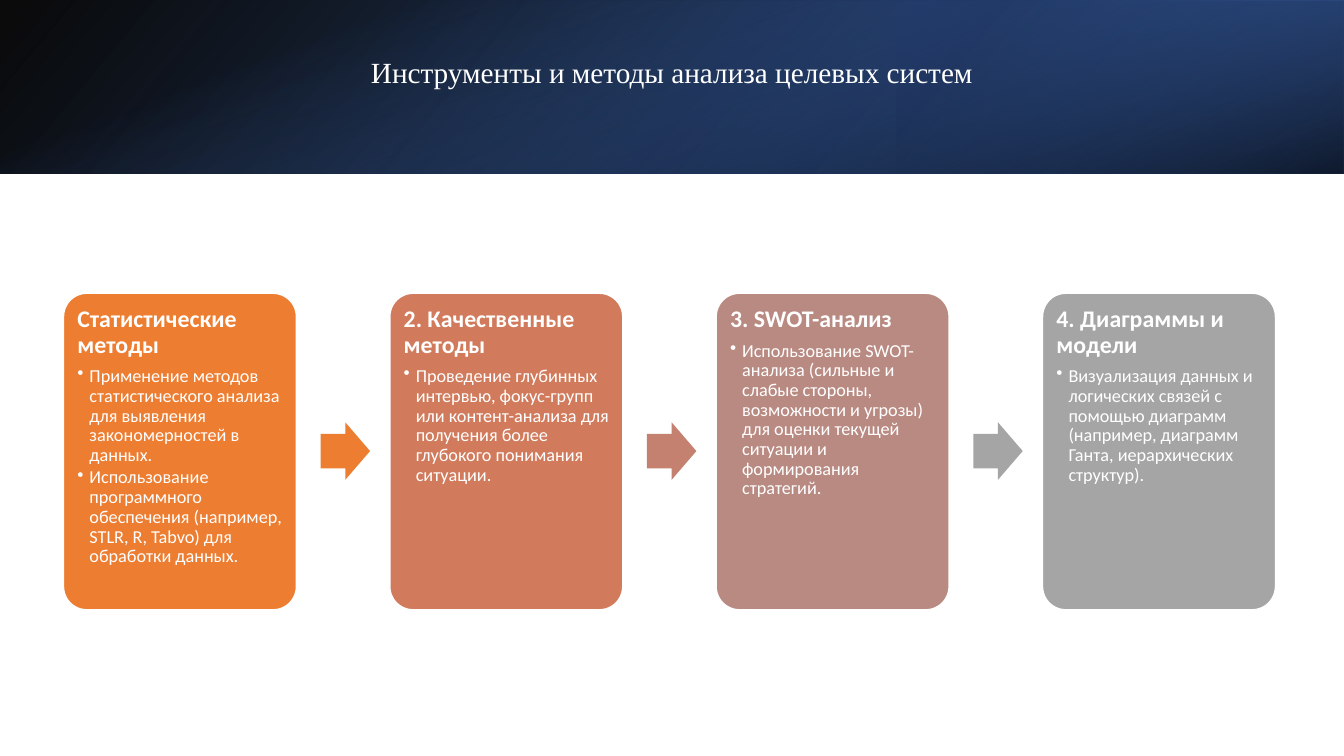
from lxml.etree import SubElement
from pptx import Presentation
from pptx.dml.color import RGBColor
from pptx.enum.shapes import MSO_SHAPE as SHAPE
from pptx.enum.text import MSO_ANCHOR as ANCHOR, MSO_AUTO_SIZE as AUTO, PP_ALIGN as ALIGN
from pptx.oxml.ns import qn
from pptx.util import Inches, Pt

CARDS = [
    ("ED7D31", "Статистические методы", [
        "Применение методов статистического анализа для выявления закономерностей в данных.",
        "Использование программного обеспечения (например, STLR, R, Tabvo) для обработки данных."]),
    ("D17B5C", "2. Качественные методы", [
        "Проведение глубинных интервью, фокус-групп или контент-анализа "
        "для получения более глубокого понимания ситуации."]),
    ("B98A82", "3. SWOT-анализ", [
        "Использование SWOT-анализа (сильные и слабые стороны, возможности и угрозы) "
        "для оценки текущей ситуации и формирования стратегий."]),
    ("A5A5A5", "4. Диаграммы и модели", [
        "Визуализация данных и логических связей с помощью диаграмм "
        "(например, диаграмм Ганта, иерархических структур)."]),
]
ARROWS = ["ED7D31", "C48170", "A5A5A5"]
LEFT, PITCH, ARROW_OFFSET = 0.63, (10.34 - 0.63) / 3, 2.55


def rgb(value):
    """Turn a hex string into a colour."""
    return RGBColor.from_string(value)


class Deck:
    """Hold the style and the current slide."""

    white, body_font, title_font = "FFFFFF", "Calibri", "Times New Roman"

    def __init__(self, prs):
        """Add a title-only slide."""
        self.slide = prs.slides.add_slide(prs.slide_layouts[5])

    def shape(self, kind, box, fill=None):
        """Add a preset shape without a line or shadow."""
        sp = self.slide.shapes.add_shape(kind, *map(Inches, box))
        sp.shadow.inherit = False
        sp.line.fill.background()
        if fill:
            sp.fill.solid()
            sp.fill.fore_color.rgb = rgb(fill)
        return sp

    def band(self, box, stops, angle, rotation=0, flip=False):
        """Add a rectangle with a translucent linear gradient."""
        sp = self.shape(SHAPE.RECTANGLE, box)
        sp.rotation = rotation
        sp_pr = sp._element.spPr
        if flip:
            sp_pr.find(qn("a:xfrm")).set("flipH", "1")
        grad = SubElement(sp_pr, qn("a:gradFill"), rotWithShape="1")
        sp_pr.find(qn("a:prstGeom")).addnext(grad)
        gs_list = SubElement(grad, qn("a:gsLst"))
        for pos, color, alpha in stops:
            gs = SubElement(gs_list, qn("a:gs"), pos=str(pos * 1000))
            clr = SubElement(gs, qn("a:srgbClr"), val=color)
            SubElement(clr, qn("a:alpha"), val=str(alpha * 1000))
        SubElement(grad, qn("a:lin"), ang=str(angle * 60000), scaled="0")

    def paragraph(self, p, text, size, after, bold=False):
        """Fill one paragraph of a card."""
        p.text = text
        p.alignment = ALIGN.LEFT
        p.line_spacing = 0.9
        p.space_after = Pt(after)
        p.font.name, p.font.size, p.font.bold = self.body_font, Pt(size), bold
        p.font.color.rgb = rgb(self.white)

    def card(self, x, fill, heading, items):
        """Add a rounded card with a heading and bullets."""
        sp = self.shape(SHAPE.ROUNDED_RECTANGLE, (x, 2.91, 2.31, 3.14), fill)
        sp.adjustments[0] = 0.1
        sp.line.color.rgb = rgb(self.white)
        sp.line.width = Pt(1)
        tf = sp.text_frame
        tf.word_wrap = True
        tf.vertical_anchor = ANCHOR.TOP
        tf.margin_left = tf.margin_right = tf.margin_top = tf.margin_bottom = Inches(0.07)
        self.paragraph(tf.paragraphs[0], heading, 17, 6, True)
        for item in items:
            p = tf.add_paragraph()
            self.paragraph(p, item, 13, 2)
            p.level = 1
            p_pr = p._p.get_or_add_pPr()
            p_pr.set("marL", str(Inches(0.12)))
            p_pr.set("indent", str(Inches(-0.12)))
            bullet = SubElement(p_pr, qn("a:buChar"), char="•")
            p_pr.find(qn("a:defRPr")).addprevious(bullet)

    def arrow(self, x, fill):
        """Add a block arrow between two cards."""
        sp = self.shape(SHAPE.RIGHT_ARROW, (x, 4.19, 0.49, 0.57), fill)
        sp.adjustments[0] = 0.6

    def title(self, text, box):
        """Format the title placeholder and bring it to the front."""
        sp = self.slide.shapes.title
        sp.left, sp.top, sp.width, sp.height = map(Inches, box)
        tf = sp.text_frame
        tf.word_wrap = True
        tf.auto_size = AUTO.NONE
        tf.vertical_anchor = ANCHOR.TOP
        p = tf.paragraphs[0]
        p.alignment = ALIGN.CENTER
        r = p.add_run()
        r.text = text
        r.font.name, r.font.size = self.title_font, Pt(36)
        r.font.color.rgb = rgb(self.white)
        r.font._element.set("baseline", "30000")
        self.slide.shapes._spTree.append(sp._element)


def main():
    """Build and save the slide."""
    prs = Presentation()
    prs.slide_width, prs.slide_height = Inches(13.33), Inches(7.5)
    deck = Deck(prs)
    deck.band((0, 0, 13.33, 1.72), [(0, "000000", 96), (100, "2F5597", 100)], 140, flip=True)
    deck.band((8.89, 0, 4.44, 1.72), [(19, "203864", 68), (100, "4472C4", 79)], 320, 180, True)
    deck.band((5.8, -5.8, 1.72, 13.33), [(23, "4472C4", 0), (99, "000000", 74)], 340, 90)
    for i, (fill, heading, items) in enumerate(CARDS):
        deck.card(LEFT + i * PITCH, fill, heading, items)
    for i, fill in enumerate(ARROWS):
        deck.arrow(LEFT + ARROW_OFFSET + i * PITCH, fill)
    deck.title("Инструменты и методы анализа целевых систем", (3.55, 0.43, 6.23, 1.11))
    prs.save("out.pptx")


if __name__ == "__main__":
    main()
